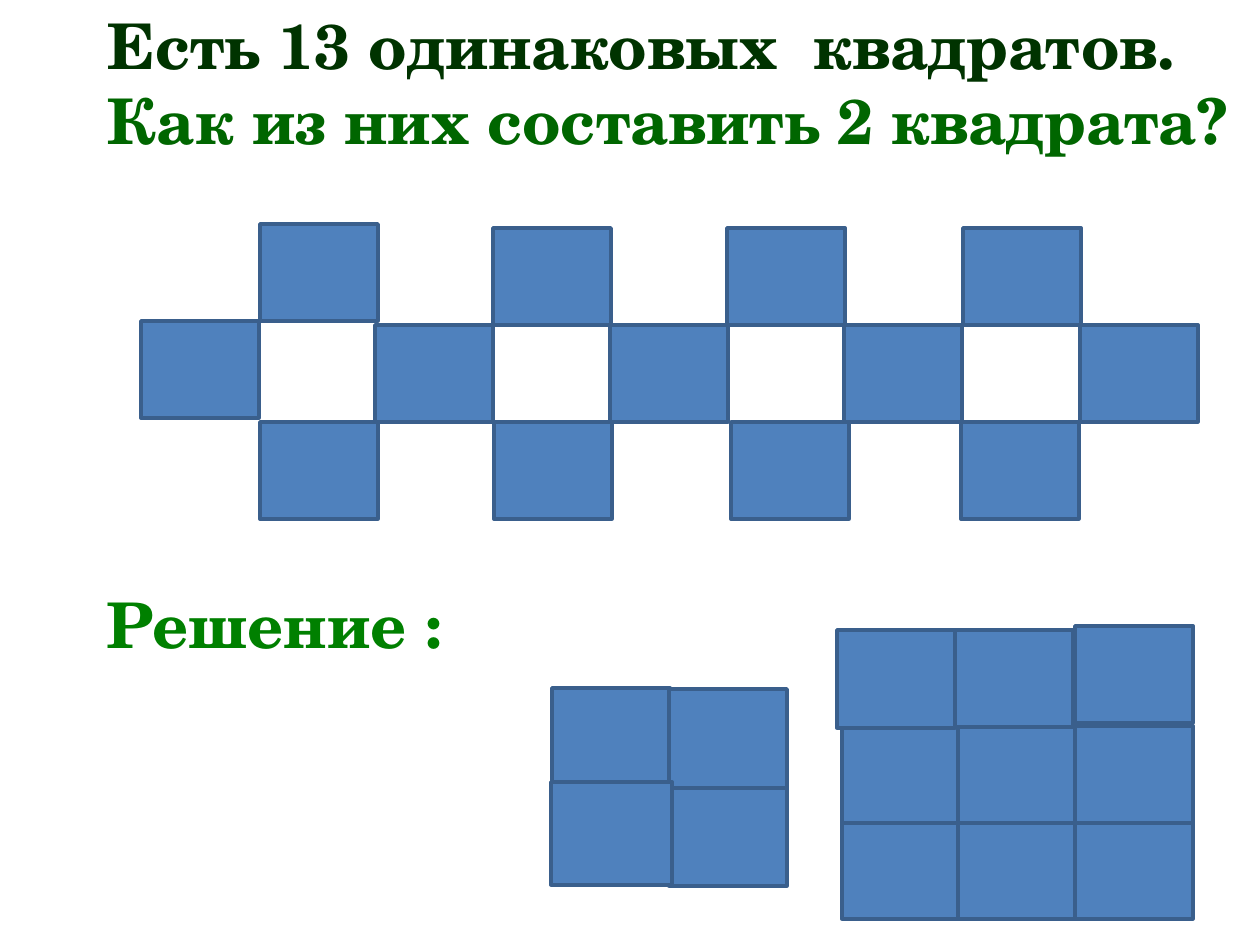
import pptx
import pptx.util
import pptx.dml.color
import pptx.enum.shapes
import pptx.enum.text

PX = 914400 // 126
DARK_GREEN = pptx.dml.color.RGBColor(0x00, 0x33, 0x00)
MID_GREEN = pptx.dml.color.RGBColor(0x00, 0x66, 0x00)
GREEN = pptx.dml.color.RGBColor(0x00, 0x80, 0x00)
BLUE = pptx.dml.color.RGBColor(0x4F, 0x81, 0xBD)
OUTLINE = pptx.dml.color.RGBColor(0x3A, 0x5F, 0x8C)
WIDTH, HEIGHT = 118, 97


def add_run(paragraph, text, color):
    run = paragraph.add_run()
    run.text = text
    run.font.name = "TeX Gyre Schola"
    run.font.size = pptx.util.Pt(36)
    run.font.bold = True
    run.font.color.rgb = color


def add_square(left, top, width=WIDTH, height=HEIGHT):
    shape = slide.shapes.add_shape(
        pptx.enum.shapes.MSO_SHAPE.RECTANGLE,
        left * PX, top * PX, width * PX, height * PX)
    shape.shadow.inherit = False
    shape.fill.solid()
    shape.fill.fore_color.rgb = BLUE
    shape.line.color.rgb = OUTLINE
    shape.line.width = pptx.util.Pt(2)


presentation = pptx.Presentation()
presentation.slide_width = pptx.util.Inches(10)
presentation.slide_height = pptx.util.Inches(7.5)
slide = presentation.slides.add_slide(presentation.slide_layouts[5])

# Question
title = slide.shapes.title
title.left, title.top, title.width, title.height = 95 * PX, 0, 1165 * PX, 165 * PX
title.text_frame.word_wrap = True
title.text_frame.auto_size = pptx.enum.text.MSO_AUTO_SIZE.NONE
title.text_frame.vertical_anchor = pptx.enum.text.MSO_ANCHOR.TOP
paragraph = title.text_frame.paragraphs[0]
paragraph.alignment = pptx.enum.text.PP_ALIGN.LEFT
add_run(paragraph, "Есть 13 одинаковых  квадратов. ", DARK_GREEN)
add_run(paragraph, "Как из них составить 2 квадрата?", MID_GREEN)

# Solution heading
heading = slide.shapes.add_textbox(86 * PX, 542 * PX, 1159 * PX, 186 * PX)
heading.text_frame.word_wrap = True
heading.text_frame.margin_left = 21 * PX
heading.text_frame.margin_top = 43 * PX
add_run(heading.text_frame.paragraphs[0], "Решение :", GREEN)

# Chain of 13 squares: top of each row, then the left edges
chain_rows = [
    (224, [260]),
    (228, [493, 727, 963]),
    (321, [141]),
    (325, [375, 610, 844, 1080]),
    (422, [260, 494, 731, 961]),
]
for top, lefts in chain_rows:
    for left in lefts:
        add_square(left, top)

# Two-by-two square, slightly uneven
add_square(552, 688, height=108)
add_square(669, 689, height=108)
add_square(669, 788, height=98)
add_square(551, 782, 121, 103)

# Three-by-three square, built from the bottom row up
for top in (822, 726):
    for left in (842, 958, 1075):
        add_square(left, top)
add_square(955, 630)
add_square(1075, 626)
add_square(837, 630, height=98)

presentation.save("out.pptx")
